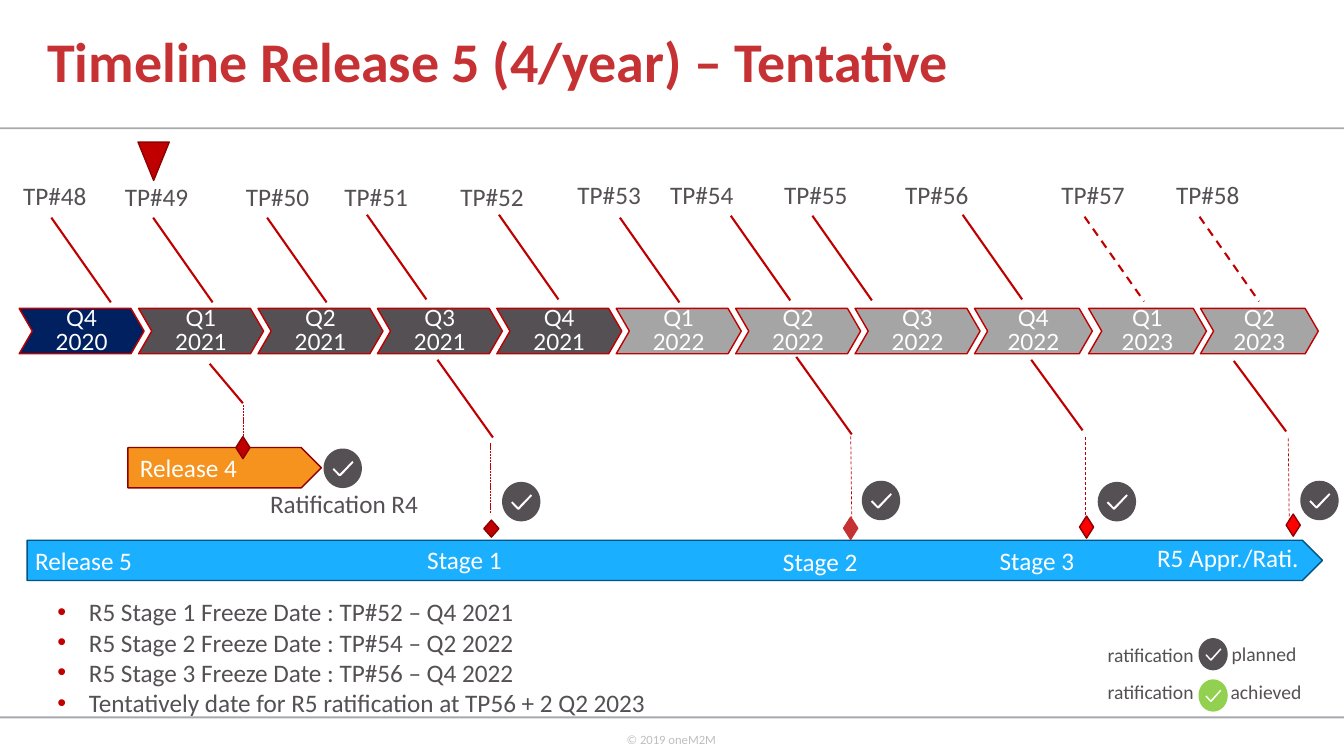
import math
from dataclasses import dataclass

from lxml import etree
from pptx import Presentation
from pptx.dml.color import RGBColor
from pptx.enum import dml, shapes, text
from pptx.oxml import ns
from pptx.util import Pt


@dataclass(frozen=True)
class Theme:
    body_font: str = "Calibri"
    chevron_font: str = "Lato"
    title_size: float = 40
    label_size: float = 18
    chevron_size: float = 16
    legend_size: float = 14
    footer_size: float = 9
    title: str = "C63133"
    ink: str = "545054"
    white: str = "FFFFFF"
    rule: str = "A7A9AC"
    footer: str = "BFBFBF"
    red: str = "C00000"
    dark_red: str = "8E0000"
    bright_red: str = "FF0000"
    navy: str = "002060"
    later: str = "A5A5A5"
    blue: str = "1AB0FF"
    dark_blue: str = "005480"
    orange: str = "F6921E"
    green: str = "92D050"


THEME = Theme()
SHAPE = shapes.MSO_SHAPE
DASH = dml.MSO_LINE.DASH
FINE_DASH = dml.MSO_LINE.SQUARE_DOT

QUARTERS = ["Q4 2020", "Q1 2021", "Q2 2021", "Q3 2021", "Q4 2021", "Q1 2022",
            "Q2 2022", "Q3 2022", "Q4 2022", "Q1 2023", "Q2 2023"]
MEETINGS = [
    (9.4, 125.3, 36.7, 155.5), (82.1, 126, 109.4, 155.5), (168.5, 126, 190.8, 155.5),
    (239, 126, 262.1, 153.4), (321.8, 126, 356.4, 153.4), (405.4, 124.6, 442.8, 155.5),
    (471.6, 124.6, 522, 154.1), (553, 124.6, 580.3, 154.1), (639.4, 124.6, 687.6, 153.4),
    (751, 124.6, 774.7, 154.8), (833, 124.6, 856.8, 154.8),
]
MILESTONES = [
    ((149.8, 259.9, 173.5, 288), (173.5, 289.4, 173.5, 311.8), FINE_DASH,
     (168.5, 311.8, 10.1, 15.8), THEME.red, THEME.dark_red, (231.1, 320.4)),
    ((312.5, 257, 352.1, 312.5), (350.6, 316.1, 350.6, 366.5), FINE_DASH,
     (345.6, 371.5, 10.8, 12.2), THEME.red, THEME.dark_red, (358.6, 344.2)),
    ((568.8, 254.9, 608.4, 310.3), (607.7, 311.8, 608.4, 370.1), DASH,
     (602.6, 369.4, 10.1, 15.8), THEME.title, THEME.title, (615.6, 343.4)),
    ((736.6, 257, 773.3, 307.4), (775.4, 312.5, 775.4, 371.5), DASH,
     (771.1, 368.6, 10.1, 15.8), THEME.bright_red, THEME.dark_red, (784.1, 344.2)),
    ((881.3, 257.8, 918.7, 308.2), (920.2, 313.2, 920.9, 372.2), DASH,
     (918.7, 367.2, 10.1, 15.8), THEME.bright_red, THEME.dark_red, (928.8, 343.4)),
]
BAR_LABELS = [("Release 5", 18, 385.9, 83.5), ("Stage 1", 298.1, 385.2, 68),
              ("Stage 2", 552.2, 386.6, 68), ("Stage 3", 707, 385.9, 68),
              ("R5 Appr./Rati.", 819.4, 383.8, 116.6)]
FREEZE_DATES = ["R5 Stage 1 Freeze Date : TP#52 – Q4 2021",
                "R5 Stage 2 Freeze Date : TP#54 – Q2 2022",
                "R5 Stage 3 Freeze Date : TP#56 – Q4 2022",
                "Tentatively date for R5 ratification at TP56 + 2 Q2 2023"]
LEGEND = [("planned", 872.6, 455, 61.2, 455.8, 455.8, THEME.ink),
          ("achieved", 871.9, 482.4, 65.5, 482.4, 485.3, THEME.green)]
TICK = [(0.45, 0.7), (0.79, 0.35), (0.75, 0.31), (0.42, 0.64),
        (0.27, 0.49), (0.23, 0.53), (0.4, 0.7)]


def add_span(para, words, size, colour, font=THEME.body_font, bold=False):
    span = para.add_run()
    span.text = words
    span.font.name = font
    span.font.size = Pt(size)
    span.font.bold = bold
    span.font.color.rgb = RGBColor.from_string(colour)


def place(box, left, top, width, height):
    box.left, box.top, box.width, box.height = Pt(left), Pt(top), Pt(width), Pt(height)


def paint(shape, fill, line=None):
    shape.shadow.inherit = False
    shape.fill.solid()
    shape.fill.fore_color.rgb = RGBColor.from_string(fill)
    if line is None:
        shape.line.fill.background()
    else:
        shape.line.color.rgb = RGBColor.from_string(line)
        shape.line.width = Pt(1)


def add_preset(page, kind, bounds, fill, line=None):
    shape = page.shapes.add_shape(kind, *map(Pt, bounds))
    paint(shape, fill, line)
    return shape


def add_label(page, words, left, top, width, height=28.8, colour=THEME.ink, size=THEME.label_size):
    box = page.shapes.add_textbox(Pt(left), Pt(top), Pt(width), Pt(height))
    box.text_frame.word_wrap = False
    box.text_frame.auto_size = text.MSO_AUTO_SIZE.SHAPE_TO_FIT_TEXT
    add_span(box.text_frame.paragraphs[0], words, size, colour)


def add_line(page, ends, width=1.5, dash=None):
    line = page.shapes.add_connector(shapes.MSO_CONNECTOR.STRAIGHT, *map(Pt, ends))
    line.line.color.rgb = RGBColor.from_string(THEME.red)
    line.line.width = Pt(width)
    if dash is not None:
        line.line.dash_style = dash
    etree.SubElement(line._element.spPr, ns.qn("a:effectLst"))


def add_check(page, left, top, width, height, fill):
    def locate(points):
        return [(Pt(left + x * width), Pt(top + y * height)) for x, y in points]

    angles = [math.tau * step / 48 for step in range(48)]
    disc = locate([(0.5 + math.cos(a) / 2, 0.5 + math.sin(a) / 2) for a in angles])
    tick = locate(TICK)
    builder = page.shapes.build_freeform(*disc[0])
    builder.add_line_segments(disc[1:], close=True)
    builder.move_to(*tick[0])
    builder.add_line_segments(tick[1:], close=True)
    paint(builder.convert_to_shape(), fill)


def add_quarter(page, index, words):
    left = 13.7 + 85.3 * index if index < 9 else 777.6 + 79.9 * (index - 9)
    width = 89.3 if index < 8 else 84.2
    fill = THEME.navy if index == 0 else THEME.ink if index < 5 else THEME.later
    chevron = add_preset(page, SHAPE.CHEVRON, (left, 220.3, width, 32.4), fill, THEME.red)
    chevron.adjustments[0] = 0.29
    frame = chevron.text_frame
    frame.word_wrap = True
    frame.vertical_anchor = text.MSO_ANCHOR.MIDDLE
    frame.margin_left = frame.margin_right = frame.margin_top = frame.margin_bottom = Pt(5.76)
    para = frame.paragraphs[0]
    para.alignment = text.PP_ALIGN.CENTER
    para.line_spacing = 0.9
    add_span(para, words, THEME.chevron_size, THEME.white, THEME.chevron_font)


def fill_title(box):
    place(box, 26.6, 0, 778.3, 92.2)
    frame = box.text_frame
    frame.auto_size = text.MSO_AUTO_SIZE.NONE
    frame.vertical_anchor = text.MSO_ANCHOR.MIDDLE
    para = frame.paragraphs[0]
    para.alignment = text.PP_ALIGN.LEFT
    para.line_spacing = 0.9
    add_span(para, "Timeline Release 5 (4/year) – Tentative", THEME.title_size, THEME.title, bold=True)


def fill_freeze_dates(box):
    place(box, 33.8, 422.6, 631.4, 116.6)
    frame = box.text_frame
    frame.auto_size = text.MSO_AUTO_SIZE.NONE
    for index, words in enumerate(FREEZE_DATES):
        para = frame.add_paragraph() if index else frame.paragraphs[0]
        para.space_before = Pt(0)
        props = para._p.get_or_add_pPr()
        props.set("marL", str(Pt(22.5)))
        props.set("indent", str(Pt(-22.5)))
        colour = etree.SubElement(props, ns.qn("a:buClr"))
        etree.SubElement(colour, ns.qn("a:srgbClr"), val=THEME.red)
        etree.SubElement(props, ns.qn("a:buFont"), typeface="Arial")
        etree.SubElement(props, ns.qn("a:buChar"), char="•")
        add_span(para, words, THEME.label_size, THEME.ink)


def add_milestone(page, branch, drop, dash, bounds, fill, line, check):
    add_line(page, branch)
    add_line(page, drop, 0.5, dash)
    add_preset(page, SHAPE.DIAMOND, bounds, fill, line)
    add_check(page, *check, 27.4, 28.2, THEME.ink)


def main():
    deck = Presentation()
    deck.slide_width, deck.slide_height = Pt(960), Pt(540)
    page = deck.slides.add_slide(deck.slide_layouts[1])
    fill_title(page.shapes.title)
    fill_freeze_dates(page.placeholders[1])
    for top in (90.9, 511.7):
        add_preset(page, SHAPE.RECTANGLE, (0, top, 960, 1.4), THEME.rule)
    add_label(page, "© 2019 oneM2M", 440.6, 519.1, 78.5, colour=THEME.footer, size=THEME.footer_size)
    marker = add_preset(page, SHAPE.ISOSCELES_TRIANGLE, (98.6, 101.5, 22.3, 27.4), THEME.red, THEME.dark_red)
    marker.rotation = 180
    add_preset(page, SHAPE.PENTAGON, (19.4, 385.9, 925.2, 28.8), THEME.blue, THEME.dark_blue)
    add_preset(page, SHAPE.PENTAGON, (91.4, 319.7, 138.2, 28.8), THEME.orange, THEME.dark_red)
    for index, words in enumerate(QUARTERS):
        add_quarter(page, index, words)
    for number, (left, top, x, y) in enumerate(MEETINGS, 48):
        add_label(page, f"TP#{number}", left, top, 60.5)
        add_line(page, (x, y, x + 42.5, y + 60.5), dash=DASH if number > 56 else None)
    for words, left, top, width in BAR_LABELS:
        add_label(page, words, left, top, width, colour=THEME.white)
    add_label(page, "Release 4", 92.9, 319.7, 85, colour=THEME.white)
    add_label(page, "Ratification R4", 185.8, 345.6, 121.7)
    for milestone in MILESTONES:
        add_milestone(page, *milestone)
    for words, left, top, width, caption_top, check_top, fill in LEGEND:
        add_label(page, "ratification", 784.1, caption_top, 77, 24.5, size=THEME.legend_size)
        add_check(page, 856.1, check_top, 20.9, 23, fill)
        add_label(page, words, left, top, width, 24.5, size=THEME.legend_size)
    deck.save("out.pptx")


if __name__ == "__main__":
    main()
